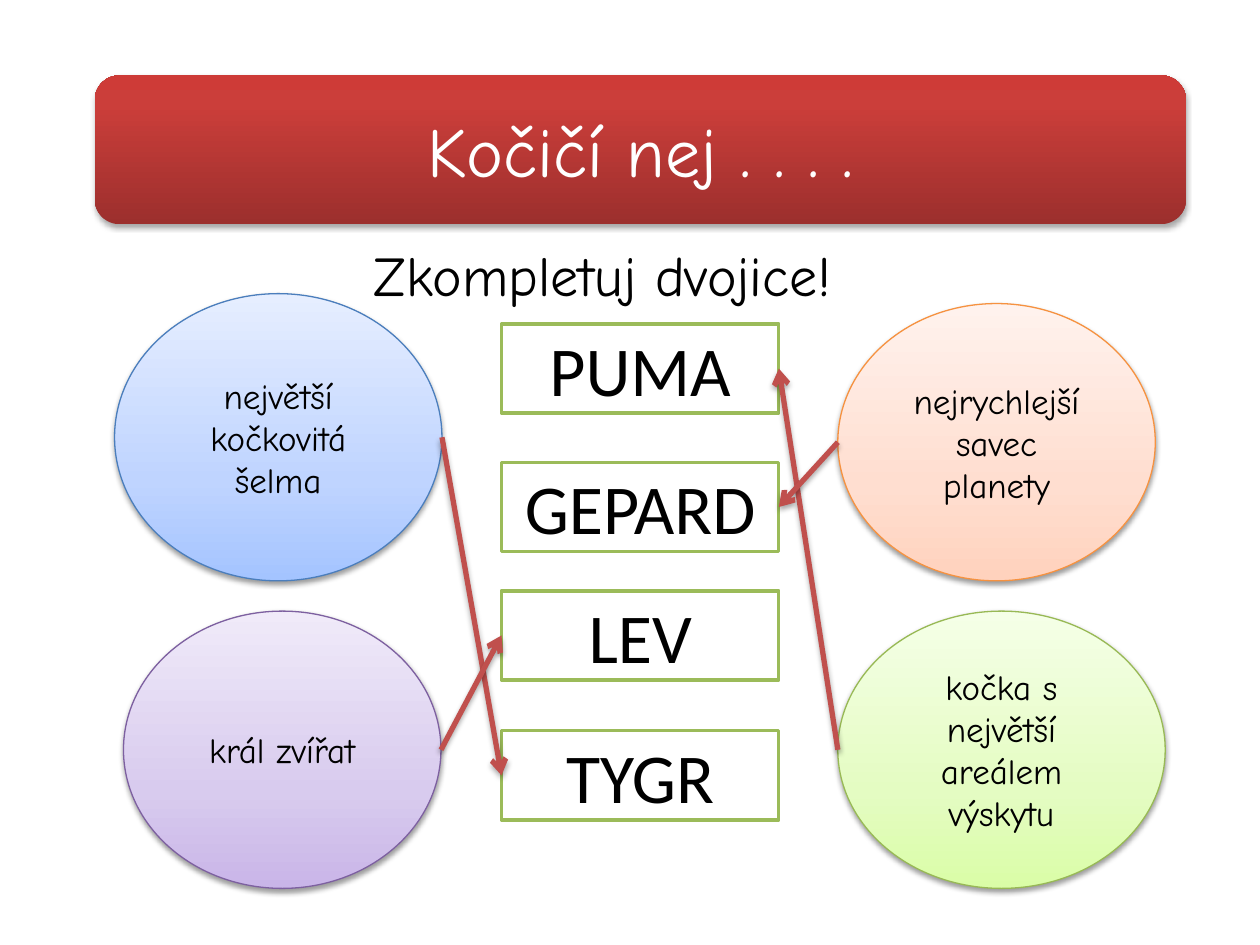
from lxml.etree import SubElement
from pptx import Presentation
from pptx.dml.color import RGBColor
from pptx.enum.shapes import MSO_CONNECTOR as Connector, MSO_SHAPE as Shape
from pptx.enum.text import MSO_ANCHOR as Anchor, PP_ALIGN as Align
from pptx.oxml.ns import qn
from pptx.util import Cm, Pt

HAND_FONT = "Comic Neue"
ANIMAL_FONT = "Calibri"
ARROW_COLOR = "C0504D"
TITLE_STOPS = [(0, "9C2F2D"), (80, "CB3E3A"), (100, "CE3B37")]

# text, (left, top, width, height), gradient colours from the bottom up, outline
CLUES = {
    "largest": ("největší kočkovitá šelma", (2.31, 5.92, 6.6, 5.79),
                ("A4C4FF", "BFD4FF", "E6EEFF"), "4B7EBC"),
    "fastest": ("nejrychlejší savec planety", (16.89, 6.12, 6.4, 5.59),
                ("FFD2BD", "FFDED0", "FFF2ED"), "F69240"),
    "king": ("král zvířat", (2.49, 12.32, 6.4, 5.59),
             ("C9B5E8", "D8CBEE", "F0EAF9"), "7D60A0"),
    "widest": ("kočka s největší areálem výskytu", (16.89, 12.32, 6.6, 5.59),
               ("DAFDA7", "E4FCC2", "F5FFE7"), "98B955"),
}
ANIMAL_TOPS = {"PUMA": 6.53, "GEPARD": 9.32, "LEV": 11.91, "TYGR": 14.73}
PAIRS = [("largest", "TYGR"), ("king", "LEV"), ("widest", "PUMA"), ("fastest", "GEPARD")]


def color(value):
    return RGBColor.from_string(value)


def add_child(parent, tag, **attributes):
    return SubElement(parent, qn(tag), {name: str(value) for name, value in attributes.items()})


def add_color(parent, value):
    return add_child(parent, "a:srgbClr", val=value)


def add_shadow(properties, opacity, distance):
    """Put a soft shadow below the element, replacing any effect list."""
    for effects in properties.findall(qn("a:effectLst")):
        properties.remove(effects)
    effects = add_child(properties, "a:effectLst")
    shadow = add_child(effects, "a:outerShdw", blurRad=Pt(3.1), dist=Pt(distance),
                       dir=90 * 60000, rotWithShape=0)
    add_child(add_color(shadow, "000000"), "a:alpha", val=opacity * 1000)


def fill_gradient(shape, stops):
    """Fill from the bottom to the top with (percent, colour) stops."""
    shape.fill.gradient()
    shape.fill.gradient_angle = 90
    stop_list = next(shape.element.spPr.iter(qn("a:gsLst")))
    for stop in list(stop_list):
        stop_list.remove(stop)
    for percent, value in stops:
        add_color(add_child(stop_list, "a:gs", pos=percent * 1000), value)


def write_text(shape, text, size, font, value="000000", align=Align.CENTER):
    frame = shape.text_frame
    frame.word_wrap = True
    para = frame.paragraphs[0]
    para.text = text
    para.alignment = align
    para.font.size = Pt(size)
    para.font.name = font
    para.font.color.rgb = color(value)


def add_shape(page, kind, area, outline=None, width=0.75):
    shape = page.shapes.add_shape(kind, *map(Cm, area))
    shape.shadow.inherit = False
    shape.text_frame.vertical_anchor = Anchor.MIDDLE
    if outline:
        shape.line.color.rgb = color(outline)
        shape.line.width = Pt(width)
    else:
        shape.line.fill.background()
    return shape


def add_title(page):
    banner = add_shape(page, Shape.ROUNDED_RECTANGLE, (1.91, 1.52, 22, 3))
    fill_gradient(banner, TITLE_STOPS)
    add_shadow(banner.element.spPr, 35, 1.8)
    write_text(banner, "Kočičí nej . . . .", 40, HAND_FONT, "FFFFFF")


def add_clue(page, text, area, colors, outline):
    bubble = add_shape(page, Shape.OVAL, area, outline)
    fill_gradient(bubble, zip((0, 35, 100), colors))
    add_shadow(bubble.element.spPr, 38, 1.6)
    write_text(bubble, text, 20, HAND_FONT)
    return bubble


def add_task(page):
    box = page.shapes.add_textbox(Cm(7.29), Cm(4.72), Cm(10.97), Cm(1.63))
    write_text(box, "Zkompletuj dvojice!", 32, HAND_FONT, align=Align.LEFT)


def add_animal(page, name, top):
    box = add_shape(page, Shape.RECTANGLE, (10.11, top, 5.59, 1.8), "9BBB59", 2)
    box.fill.solid()
    box.fill.fore_color.rgb = color("FFFFFF")
    write_text(box, name, 40, ANIMAL_FONT)
    return box


def add_arrow(page, clue, animal):
    """Join the facing sides of a clue and an animal."""
    if clue.left < animal.left:
        start, end = clue.left + clue.width, animal.left
    else:
        start, end = clue.left, animal.left + animal.width
    arrow = page.shapes.add_connector(
        Connector.STRAIGHT, start, clue.top + clue.height // 2,
        end, animal.top + animal.height // 2)
    arrow.line.color.rgb = color(ARROW_COLOR)
    arrow.line.width = Pt(3)
    add_child(arrow.line._get_or_add_ln(), "a:tailEnd", type="arrow")
    add_shadow(arrow._element.spPr, 35, 1.8)


def main():
    deck = Presentation()
    deck.slide_width, deck.slide_height = Cm(25.4), Cm(19.05)
    page = deck.slides.add_slide(deck.slide_layouts[6])
    add_title(page)
    clues = {key: add_clue(page, *clue) for key, clue in CLUES.items()}
    add_task(page)
    animals = {name: add_animal(page, name, top) for name, top in ANIMAL_TOPS.items()}
    for clue, animal in PAIRS:
        add_arrow(page, clues[clue], animals[animal])
    deck.save("out.pptx")


if __name__ == "__main__":
    main()
